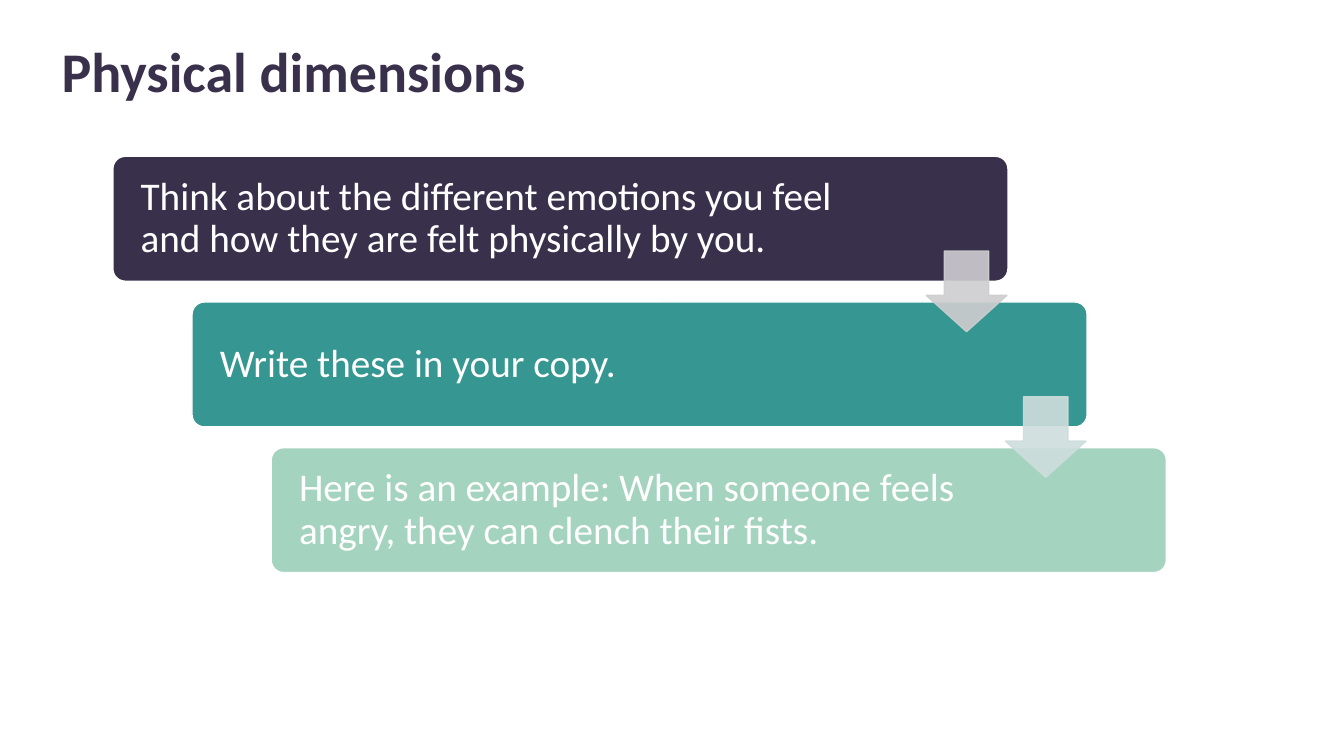
"""Build the "Physical dimensions" slide: three stepped cards joined by arrows."""
from dataclasses import dataclass

from lxml import etree
from pptx import Presentation
from pptx import util as u
from pptx.dml.color import RGBColor
from pptx.enum import shapes, text
from pptx.oxml.ns import qn

WIDTH, HEIGHT = u.Inches(13.33), u.Inches(7.5)
COLUMN, ROW = WIDTH / 100, HEIGHT / 100
STEP_X, STEP_Y = 5.89, 19.27
FONT = "Calibri"
INK, WHITE = "39304C", "FFFFFF"


@dataclass(frozen=True)
class Area:
    """A rectangle in grid columns and rows."""
    left: float
    top: float
    width: float
    height: float

    def stepped(self, index: int) -> "Area":
        """Return the area moved down the staircase."""
        return Area(self.left + index * STEP_X, self.top + index * STEP_Y,
                    self.width, self.height)

    def bounds(self) -> tuple[int, ...]:
        """Return left, top, width and height in slide units."""
        return (round(self.left * COLUMN), round(self.top * ROW),
                round(self.width * COLUMN), round(self.height * ROW))


@dataclass(frozen=True)
class Card:
    """A coloured card with its sentence."""
    words: str
    fill: str


TITLE_AREA = Area(3.83, 5.33, 86.25, 9.07)
CARD_AREA = Area(8.4, 20.67, 66.6, 16.53)
ARROW_AREA = Area(68.92, 33.2, 6, 10.67)
CARDS = (
    Card("Think about the different emotions you feel and how they are felt "
         "physically by you.", INK),
    Card("Write these in your copy.", "369691"),
    Card("Here is an example: When someone feels angry, they can clench "
         "their fists.", "A4D3BF"),
)
ARROW_FILLS = ("CECDD0", "CEDDDC")


def color(value: str) -> RGBColor:
    """Turn a hex string into a colour."""
    return RGBColor.from_string(value)


def apply(target, values: dict) -> None:
    """Set every attribute named in the dict."""
    for name, value in values.items():
        setattr(target, name, value)


def write(box, words: str, size: int, ink: str, bold: bool, margins: dict) -> None:
    """Fill a shape with one left-aligned, vertically centred paragraph."""
    frame = box.text_frame
    apply(frame, {"word_wrap": True, "auto_size": text.MSO_AUTO_SIZE.NONE,
                  "vertical_anchor": text.MSO_ANCHOR.MIDDLE, **margins})
    para = frame.paragraphs[0]
    apply(para, {"alignment": text.PP_ALIGN.LEFT, "line_spacing": 0.9})
    span = para.add_run()
    span.text = words
    apply(span.font, {"name": FONT, "size": u.Pt(size), "bold": bold})
    span.font.color.rgb = color(ink)


def add_block(page, kind, area: Area, fill: str, line: str, adjustments: tuple):
    """Draw a filled preset shape with a one-point outline."""
    box = page.shapes.add_shape(kind, *area.bounds())
    box.shadow.inherit = False
    box.fill.solid()
    box.fill.fore_color.rgb = color(fill)
    box.line.color.rgb = color(line)
    box.line.width = u.Pt(1)
    for index, value in enumerate(adjustments):
        box.adjustments[index] = value
    return box


def add_card(page, card: Card, area: Area) -> None:
    """Draw one card with its text."""
    box = add_block(page, shapes.MSO_SHAPE.ROUNDED_RECTANGLE, area,
                    card.fill, WHITE, (0.1,))
    write(box, card.words, 28, WHITE, False, {
        "margin_left": round(1.8 * COLUMN), "margin_right": round(11.25 * COLUMN),
        "margin_top": round(2.67 * ROW), "margin_bottom": round(2.67 * ROW)})


def add_arrow(page, fill: str, area: Area) -> None:
    """Draw one slightly transparent down arrow."""
    box = add_block(page, shapes.MSO_SHAPE.DOWN_ARROW, area, fill, fill, (0.55, 0.45))
    for tint in box.element.spPr.iter(qn("a:srgbClr")):
        etree.SubElement(tint, qn("a:alpha")).set("val", "90000")


def main() -> None:
    """Build and save the deck."""
    deck = Presentation()
    apply(deck, {"slide_width": WIDTH, "slide_height": HEIGHT})
    page = deck.slides.add_slide(deck.slide_layouts[5])
    title = page.shapes.title
    apply(title, dict(zip(("left", "top", "width", "height"), TITLE_AREA.bounds())))
    write(title, "Physical dimensions", 40, INK, True, {})
    for index, card in enumerate(CARDS):
        add_card(page, card, CARD_AREA.stepped(index))
    for index, fill in enumerate(ARROW_FILLS):
        add_arrow(page, fill, ARROW_AREA.stepped(index))
    deck.save("out.pptx")


if __name__ == "__main__":
    main()
